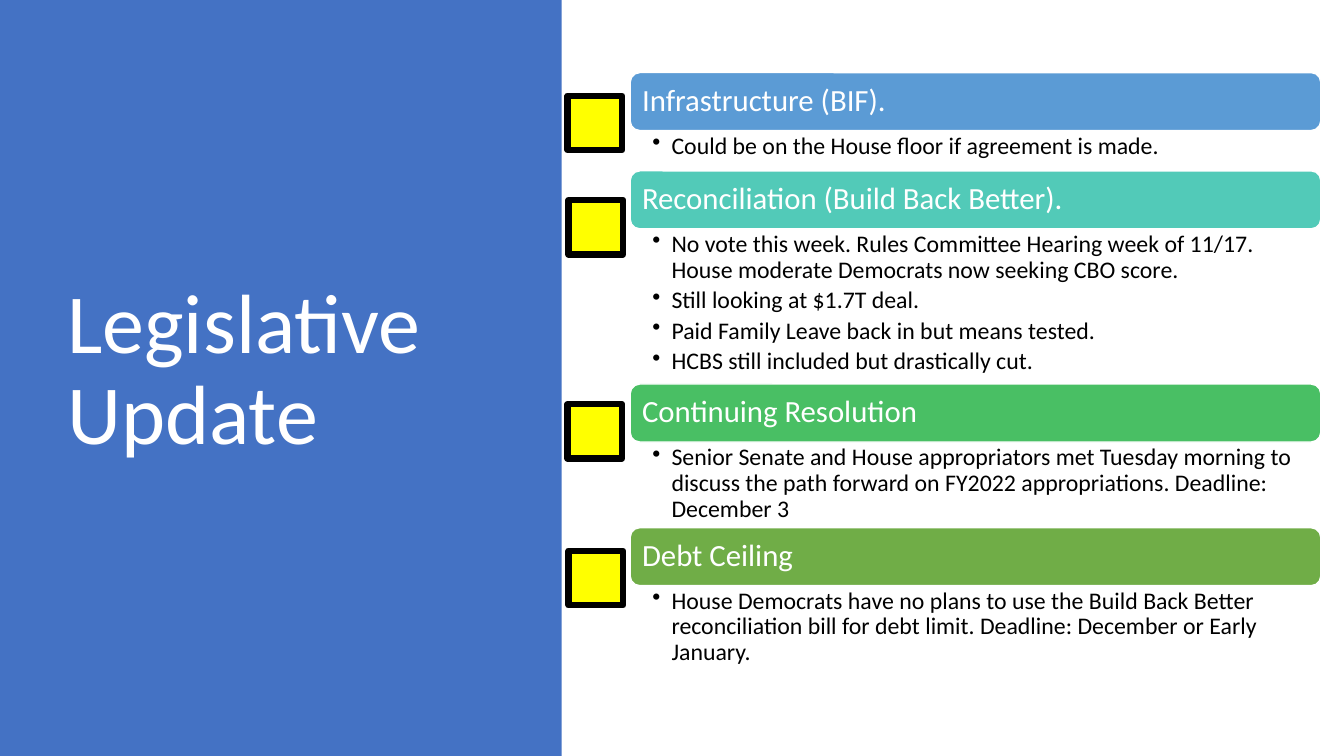
from lxml.etree import SubElement
from pptx import Presentation
from pptx.dml.color import RGBColor
from pptx.enum.shapes import MSO_SHAPE
from pptx.enum.text import MSO_ANCHOR, PP_ALIGN
from pptx.oxml.ns import qn
from pptx.util import Inches, Pt

HUES = {"panel": "4472C4", "blue": "5B9BD5", "teal": "52CAB8", "green": "49BF64",
        "olive": "70AD47", "yellow": "FFFF00", "white": "FFFFFF", "black": "000000"}
WIDTH, HEIGHT = 13.33, 7.5
LEFT, SPAN = 6.25, 6.85  # column of topics
BAR, BOX = 0.575, 0.54   # heading height, checkbox side

# heading, colour, height of the bullets, checkbox left, checkbox drop, bullets
TOPICS = [
    ("Infrastructure (BIF).\u00a0", "blue", 0.4, 5.63, 0.23,
     ["Could be on the House floor if agreement is made."]),
    ("Reconciliation (Build Back Better).\u00a0", "teal", 1.54, 5.64, 0.29,
     ["No vote this week. Rules Committee Hearing week of 11/17. "
      "House moderate Democrats now seeking CBO score.",
      "Still looking at $1.7T deal.",
      "Paid Family Leave back in but means tested.",
      "HCBS still included but drastically cut."]),
    ("Continuing Resolution\u00a0", "green", 0.85, 5.63, 0.2,
     ["Senior Senate and House appropriators met Tuesday morning to discuss "
      "the path forward on FY2022 appropriations. Deadline: December 3"]),
    ("Debt Ceiling", "olive", 0.85, 5.64, 0.23,
     ["House Democrats have no plans to use the Build Back Better "
      "reconciliation bill for debt limit. Deadline: December or Early January."]),
]

deck = Presentation()
deck.slide_width, deck.slide_height = Inches(WIDTH), Inches(HEIGHT)
slide = deck.slides.add_slide(deck.slide_layouts[6])


def draw(kind, area, fill, line=None, weight=1):
    shape = slide.shapes.add_shape(kind, *map(Inches, area))
    shape.shadow.inherit = False
    shape.fill.solid()
    shape.fill.fore_color.rgb = RGBColor.from_string(HUES[fill])
    if line:
        shape.line.color.rgb = RGBColor.from_string(HUES[line])
        shape.line.width = Pt(weight)
    else:
        shape.line.fill.background()
    return shape


def write(shape, lines, size, hue, pads, anchor=MSO_ANCHOR.MIDDLE, bullet=False):
    """Fill a shape with paragraphs; pads are the side and top insets in inches."""
    frame = shape.text_frame
    frame.word_wrap = True
    frame.vertical_anchor = anchor
    frame.margin_left, frame.margin_right, frame.margin_top = map(Inches, pads)
    frame.margin_bottom = frame.margin_top
    frame.text = "\n".join(lines)
    for par in frame.paragraphs:
        par.alignment = PP_ALIGN.LEFT
        par.line_spacing = 0.9
        par.font.name, par.font.size = "Calibri", Pt(size)
        par.font.color.rgb = RGBColor.from_string(HUES[hue])
        if bullet:
            par.space_after = Pt(0.2 * size)
            props = par._p.get_or_add_pPr()
            props.set("marL", str(Inches(0.19)))
            props.set("indent", str(-Inches(0.19)))
            SubElement(props, qn("a:buChar"), char="•")


draw(MSO_SHAPE.RECTANGLE, (0, 0, 5.57, HEIGHT), "panel")
title = slide.shapes.add_textbox(*map(Inches, (0.57, 0.68, 4.16, 6.02)))
write(title, ["Legislative Update"], 60, "white", (0.1, 0.1, 0.05))

top = 0.72
for head, hue, tall, side, drop, notes in TOPICS:
    bar = draw(MSO_SHAPE.ROUNDED_RECTANGLE, (LEFT, top, SPAN, BAR), hue, "white")
    write(bar, [head], 22, "white", (0.09, 0.09, 0.09))
    body = slide.shapes.add_textbox(*map(Inches, (LEFT, top + BAR, SPAN, tall)))
    write(body, notes, 17, "black", (0.22, 0.17, 0.03), MSO_ANCHOR.TOP, True)
    draw(MSO_SHAPE.RECTANGLE, (side, top + drop, BOX, BOX), "yellow", "black", 4.5)
    top += BAR + tall

deck.save("out.pptx")
